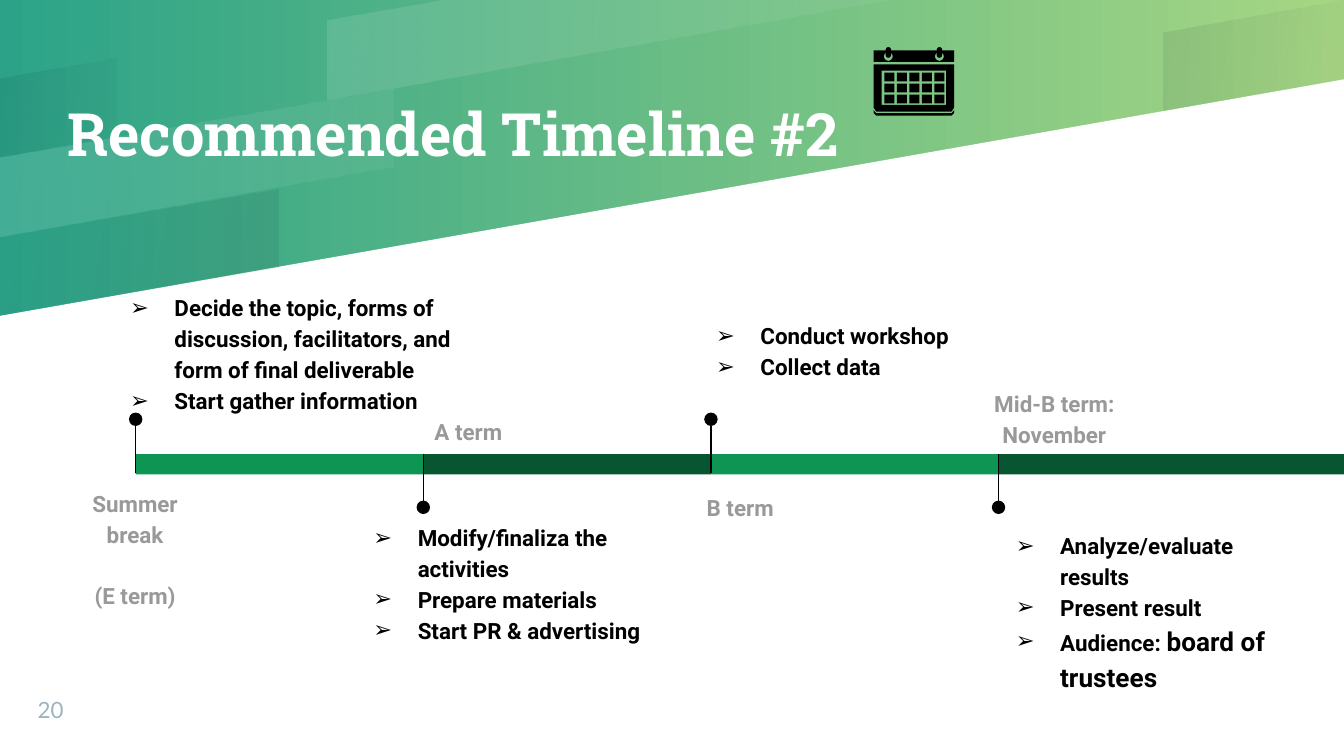
from math import cos, pi, sin

from lxml import etree
from pptx import Presentation
from pptx.dml.color import RGBColor
from pptx.enum.shapes import MSO_CONNECTOR, MSO_SHAPE
from pptx.enum.text import MSO_ANCHOR, MSO_AUTO_SIZE, PP_ALIGN
from pptx.oxml.ns import qn
from pptx.util import Emu, Inches, Pt

RECTANGLE, OVAL, ROUNDED = MSO_SHAPE.RECTANGLE, MSO_SHAPE.OVAL, MSO_SHAPE.ROUNDED_RECTANGLE
STRAIGHT = MSO_CONNECTOR.STRAIGHT
TOP, MIDDLE, BOTTOM = MSO_ANCHOR.TOP, MSO_ANCHOR.MIDDLE, MSO_ANCHOR.BOTTOM
LEFT, CENTER = PP_ALIGN.LEFT, PP_ALIGN.CENTER
NO_FIT = MSO_AUTO_SIZE.NONE

# The grid has 100 columns and 56.25 rows of square cells
COLUMNS, ROWS = 100, 56.25
CELL = Inches(0.1)
BLACK, WHITE, GREY, SHADE = "000000", "FFFFFF", "999999", "00001A"


def cells(count):
    return Emu(round(count * CELL))


def color(code):
    return RGBColor.from_string(code)


def add_child(parent, tag, **attributes):
    return etree.SubElement(parent, qn(tag), attributes)


def add_bullet(para, mark):
    properties = para._p.get_or_add_pPr()
    properties.set("marL", str(Inches(0.5)))
    properties.set("indent", str(-Inches(0.33)))
    add_child(add_child(properties, "a:buClr"), "a:srgbClr", val=BLACK)
    add_child(properties, "a:buFont", typeface="Roboto")
    add_child(properties, "a:buChar", char=mark)


def add_text_shadow(span):
    effects = etree.Element(qn("a:effectLst"))
    shadow = add_child(effects, "a:outerShdw", blurRad="28575", dist="19050",
                       dir="5400000", algn="bl", rotWithShape="0")
    add_child(add_child(shadow, "a:srgbClr", val=BLACK), "a:alpha", val="30000")
    span.font._element.find(qn("a:solidFill")).addnext(effects)


def write(frame, paragraphs, size=12, font="Roboto", ink=BLACK, bold=True, align=LEFT,
          anchor=TOP, inset=1, spacing=1.15, gap=0, bullet=None):
    """Each paragraph is a string, or a list of (text, size) pairs."""
    frame.word_wrap, frame.auto_size, frame.vertical_anchor = True, NO_FIT, anchor
    frame.margin_left = frame.margin_right = cells(inset)
    frame.margin_top = frame.margin_bottom = cells(inset)
    for number, content in enumerate(paragraphs):
        para = frame.add_paragraph() if number else frame.paragraphs[0]
        para.alignment, para.line_spacing = align, spacing
        para.space_before = Pt(gap if number else 0)
        if bullet:
            add_bullet(para, bullet)
        pairs = [(content, size)] if isinstance(content, str) else content
        for text, span_size in pairs:
            span = para.add_run()
            span.text = text
            span.font.size, span.font.name, span.font.bold = Pt(span_size), font, bold
            span.font.color.rgb = color(ink)


class Canvas:
    """The current slide and the style of its elements; lengths are grid cells."""

    def __init__(self, slide):
        self.slide, self.shapes = slide, slide.shapes

    def background(self, start, end):
        fill = self.slide.background.fill
        fill.gradient()
        fill.gradient_angle = 0
        for stop, code in zip(fill.gradient_stops, (start, end)):
            stop.color.rgb = color(code)

    def finish(self, shape, ink):
        shape.shadow.inherit = False
        shape.line.fill.background()
        shape.fill.solid()
        shape.fill.fore_color.rgb = color(ink)
        return shape

    def shape(self, kind, left, top, width, height, ink=BLACK):
        box = self.shapes.add_shape(kind, *map(cells, (left, top, width, height)))
        return self.finish(box, ink)

    def outline(self, *contours, ink=BLACK):
        """Later contours are holes in the first."""
        builder = None
        for contour in contours:
            points = [(cells(x), cells(y)) for x, y in contour]
            if builder is None:
                builder = self.shapes.build_freeform(*points[0])
            else:
                builder.move_to(*points[0])
            builder.add_line_segments(points[1:], close=True)
        return self.finish(builder.convert_to_shape(), ink)

    def veil(self, points, ink, start, end):
        """A band whose opacity runs from start to end percent."""
        band = self.outline(points)
        band.fill.gradient()
        band.fill.gradient_angle = 350
        for stop in band.fill.gradient_stops:
            stop.color.rgb = color(ink)
        tints = band._element.spPr.iter(qn("a:srgbClr"))
        for tint, opacity in zip(list(tints), (start, end)):
            add_child(tint, "a:alpha", val=str(opacity * 1000))

    def line(self, x, top, bottom):
        stem = self.shapes.add_connector(STRAIGHT, *map(cells, (x, top, x, bottom)))
        stem.line.color.rgb, stem.line.width = color(BLACK), Pt(0.75)
        add_child(stem._element.spPr, "a:effectLst")

    def text(self, place, paragraphs, **style):
        box = self.shapes.add_textbox(*map(cells, place))
        write(box.text_frame, paragraphs, **style)

    def title(self, place, text, **style):
        box = self.shapes.title
        box.left, box.top, box.width, box.height = map(cells, place)
        write(box.text_frame, [text], **style)
        add_text_shadow(box.text_frame.paragraphs[0].runs[0])
        self.shapes._spTree.append(box._element)  # in front of the banner


def rectangle(left, top, right, bottom):
    return [(left, top), (right, top), (right, bottom), (left, bottom)]


def circle(x, y, radius, steps=16):
    angles = [2 * pi * step / steps for step in range(steps)]
    return [(x + radius * cos(angle), y + radius * sin(angle)) for angle in angles]


def draw_banner(canvas):
    canvas.background("2CA388", "A6D683")
    canvas.outline([(0, ROWS), (COLUMNS, ROWS), (COLUMNS, 5.9), (0, 23.5)], ink=WHITE)
    for points, ink, start, end in (
        ([(33.2, 0), (24.4, 1.5), (24.4, 7.4), (66.5, 0)], WHITE, 12, 5),
        ([(0, 5.8), (0, 11.7), (8.7, 10.2), (8.7, 4.3)], SHADE, 8, 2),
        ([(0, 17.6), (0, 23.5), (20.7, 19.9), (20.7, 14)], SHADE, 2, 8),
        ([(100, 0), (99.9, 0), (86.6, 2.4), (86.6, 8.2), (100, 5.9)], SHADE, 8, 2),
        ([(0, 11.7), (0, 17.6), (29.3, 12.4), (29.3, 6.6)], WHITE, 12, 5),
    ):
        canvas.veil(points, ink, start, end)


def draw_timeline(canvas):
    first, pitch = 10.1, 21.4
    bullets = dict(bullet="➢")
    label = dict(ink=GREY, align=CENTER, gap=16)
    terms = (  # label place, label, its style, notes place, notes
        ((5.3, 35.2, 9.5, 4.1), ["Summer break", "(E term)"], label, (7, 20.6, 30.7, 9.4),
         ["Decide the topic, forms of discussion, facilitators, and form of final deliverable",
          "Start gather information"]),
        ((27.5, 29.8, 14.7, 3.9), ["A term"], label, (25.1, 37.7, 25.5, 14.7),
         ["Modify/finaliza the activities", "Prepare materials", "Start PR & advertising"]),
        ((51.6, 35.5, 18, 8.3), ["B term"], dict(ink=GREY), (50.6, 22.7, 26, 8.3),
         ["Conduct workshop", "Collect data"]),
        ((70.2, 27.7, 16.5, 4.1), ["Mid-B term: November"], label, (72.9, 38.3, 24.6, 10.3),
         ["Analyze/evaluate results", "Present result",
          [("Audience: ", 12), ("board of trustees", 14)]]),
    )
    for number, (label_place, name, style, notes_place, notes) in enumerate(terms):
        x, below = first + pitch * number, number % 2
        width = COLUMNS - x if number == len(terms) - 1 else pitch
        canvas.shape(RECTANGLE, x, 33.8, width, 1.5, "085631" if below else "0E9453")
        stem_top, stem_bottom, dot_y = (33.8, 37.7, 37.7) if below else (31.3, 35.2, 31.2)
        canvas.line(x, stem_top, stem_bottom)
        canvas.shape(OVAL, x - 0.5, dot_y - 0.5 + below * 0.05, 1, 1)
        canvas.text(label_place, name, **style)
        canvas.text(notes_place, notes, **bullets)


def draw_calendar(canvas):
    left, right, rings = 65, 71, (66.1, 69.9)
    # Header with its ring holes, body with its window, and the lower page edge
    canvas.outline(rectangle(left, 3.75, right, 4.6), *[circle(x, 4.2, 0.33) for x in rings])
    canvas.outline([(left, 4.8), (right, 4.8), (right, 8), (70.8, 8.3), (65.2, 8.3), (left, 8)],
                   rectangle(65.6, 5.25, 70.4, 7.8))
    canvas.outline([(left, 8.2), (65.2, 8.42), (70.8, 8.42), (right, 8.2), (right, 8.4),
                    (70.8, 8.6), (65.2, 8.6), (left, 8.4)])
    for x in rings:
        ring = canvas.shape(ROUNDED, x - 0.2, 3.5, 0.4, 0.8)
        ring.adjustments[0] = 0.5
    # Days
    for row in range(3):
        for column in range(5):
            canvas.shape(RECTANGLE, 65.8 + 0.93 * column, 5.4 + 0.82 * row, 0.75, 0.65)


def main():
    deck = Presentation()
    deck.slide_width, deck.slide_height = cells(COLUMNS), cells(ROWS)
    canvas = Canvas(deck.slides.add_slide(deck.slide_layouts[5]))
    draw_banner(canvas)
    canvas.title((5, 0, 60, 19.8), "Recommended Timeline #2", size=32, font="Roboto Slab",
                 ink=WHITE, anchor=MIDDLE, inset=0, spacing=1)
    canvas.text((2.8, 51.1, 5.3, 2.7), ["20"], font="Lato", ink="9EB3C2", bold=False,
                anchor=BOTTOM, inset=0, spacing=1)
    draw_timeline(canvas)
    draw_calendar(canvas)
    deck.save("out.pptx")


if __name__ == "__main__":
    main()
